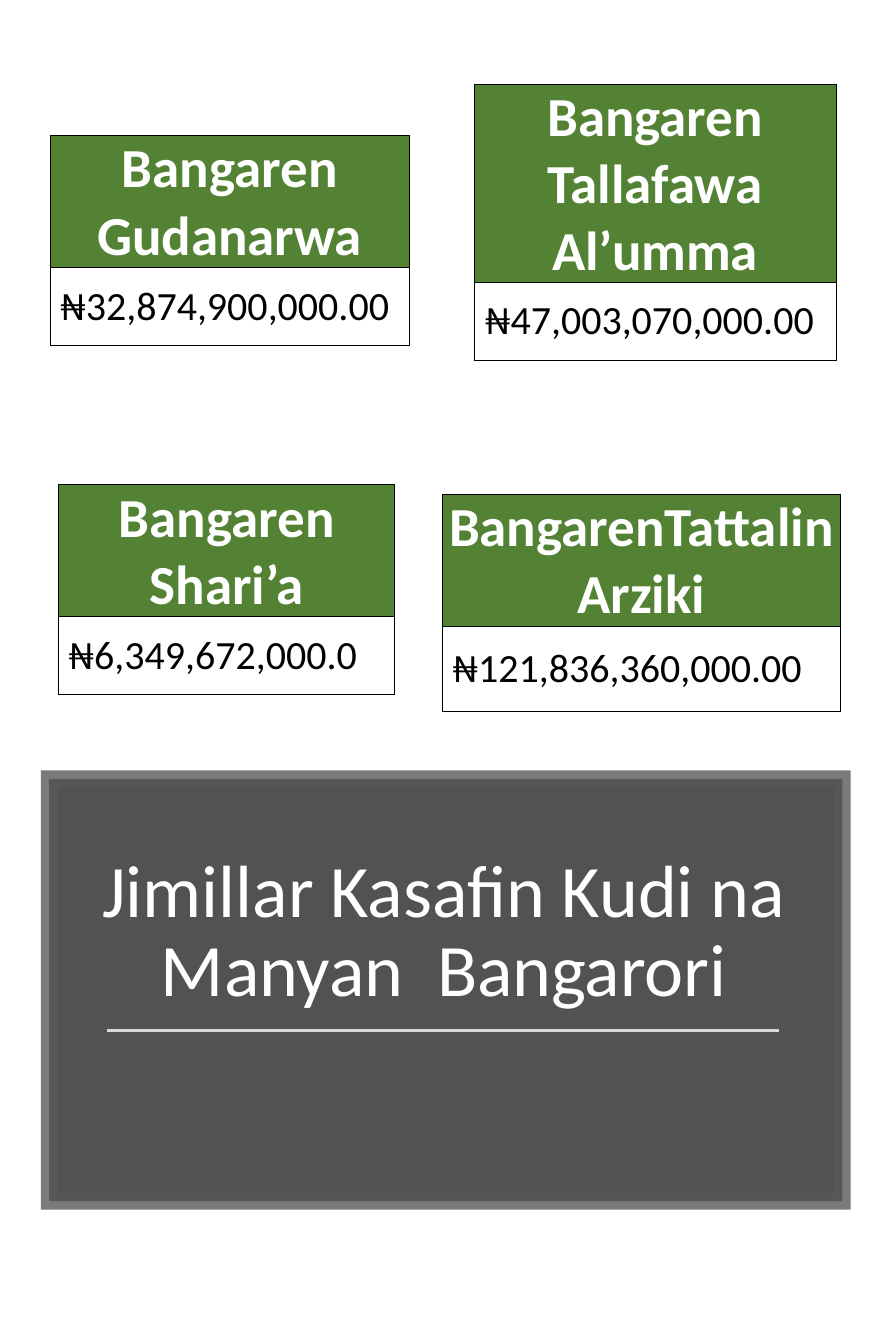
from lxml.etree import SubElement
from pptx import Presentation
from pptx.dml.color import RGBColor
from pptx.enum.shapes import MSO_CONNECTOR, MSO_SHAPE
from pptx.enum.text import MSO_ANCHOR, PP_ALIGN
from pptx.oxml.ns import qn
from pptx.util import Inches, Pt

SLIDE_SIZE = (7.4, 11.2)
TITLE = "Jimillar Kasafin Kudi na Manyan  Bangarori"
SECTORS = [
    ("Bangaren Gudanarwa", "₦32,874,900,000.00", (0.42, 1.13, 2.99), (1.1, 0.65), 0.08),
    ("Bangaren Shari’a", "₦6,349,672,000.0", (0.49, 4.04, 2.8), (1.1, 0.65), 0.08),
    ("Bangaren Tallafawa Al’umma", "₦47,003,070,000.00", (3.95, 0.7, 3.02), (1.65, 0.65), 0.09),
    ("BangarenTattalin Arziki", "₦121,836,360,000.00", (3.69, 4.12, 3.31), (1.1, 0.71), 0.08),
]
PANEL = (0.41, 6.49, 6.61, 3.52)
TITLE_BOX = (0.6, 6.85, 6.2, 1.64)
RULE = (0.89, 8.59, 6.49, 8.59)

HEADER = {"size": Pt(33), "bold": True, "color": "FFFFFF"}
AMOUNT = {"size": Pt(24), "bold": False, "color": "000000"}
HEADING = {"size": Pt(44.4), "bold": False, "color": "FFFFFF"}
PLAIN_TABLE = {"first_row": False, "horz_banding": False}


def set_all(target, values):
    for name, value in values.items():
        setattr(target, name, value)


def inches(values):
    return [Inches(value) for value in values]


def paint(color_format, color, opacity=None):
    color_format.rgb = RGBColor.from_string(color)
    if opacity is not None:
        for element in color_format._xFill.iter(qn("a:srgbClr")):
            SubElement(element, qn("a:alpha")).set("val", str(opacity * 1000))


def fill_solid(fill, color, opacity=None):
    fill.solid()
    paint(fill.fore_color, color, opacity)


def write(frame, text, style, alignment):
    paragraph = frame.paragraphs[0]
    paragraph.alignment = alignment
    run = paragraph.add_run()
    run.text = text
    set_all(run.font, {"name": "Calibri", "size": style["size"], "bold": style["bold"]})
    paint(run.font.color, style["color"])
    return paragraph


def add_borders(cell):
    properties = cell._tc.get_or_add_tcPr()
    for position, side in enumerate(("lnL", "lnR", "lnT", "lnB")):
        border = properties.makeelement(qn(f"a:{side}"), {"w": str(Pt(0.5))})
        fill = SubElement(border, qn("a:solidFill"))
        SubElement(fill, qn("a:srgbClr")).set("val", "000000")
        properties.insert(position, border)


def add_sector(slide, name, amount, place, row_heights, indent):
    left, top, width = place
    frame = slide.shapes.add_table(2, 1, *inches((left, top, width, sum(row_heights))))
    table = frame.table
    set_all(table, PLAIN_TABLE)
    rows = [
        (name, HEADER, PP_ALIGN.CENTER, "548235", 0),
        (amount, AMOUNT, PP_ALIGN.LEFT, None, indent),
    ]
    for index, (text, style, alignment, color, margin) in enumerate(rows):
        table.rows[index].height = Inches(row_heights[index])
        cell = table.cell(index, 0)
        set_all(cell, {
            "margin_left": Inches(margin), "margin_right": 0, "margin_top": 0,
            "margin_bottom": 0, "vertical_anchor": MSO_ANCHOR.MIDDLE,
        })
        if color:
            fill_solid(cell.fill, color)
        else:
            cell.fill.background()
        write(cell.text_frame, text, style, alignment)
        add_borders(cell)


def add_title(slide):
    panel = slide.shapes.add_shape(MSO_SHAPE.RECTANGLE, *inches(PANEL))
    panel.shadow.inherit = False
    fill_solid(panel.fill, "404040", 90)
    panel.line.width = Pt(10)
    fill_solid(panel.line.fill, "595959", 80)
    SubElement(panel.line._ln, qn("a:miter")).set("lim", "800000")

    box = slide.shapes.add_textbox(*inches(TITLE_BOX))
    set_all(box.text_frame, {"word_wrap": True, "vertical_anchor": MSO_ANCHOR.BOTTOM})
    paragraph = write(box.text_frame, TITLE, HEADING, PP_ALIGN.CENTER)
    set_all(paragraph, {"line_spacing": 0.9, "space_after": Pt(5.9)})

    rule = slide.shapes.add_connector(MSO_CONNECTOR.STRAIGHT, *inches(RULE))
    rule.line.width = Pt(1.75)
    fill_solid(rule.line.fill, "D9D9D9")
    SubElement(rule._element.spPr, qn("a:effectLst"))


def main():
    presentation = Presentation()
    width, height = inches(SLIDE_SIZE)
    set_all(presentation, {"slide_width": width, "slide_height": height})
    slide = presentation.slides.add_slide(presentation.slide_layouts[6])
    add_title(slide)
    for sector in SECTORS:
        add_sector(slide, *sector)
    presentation.save("out.pptx")


if __name__ == "__main__":
    main()
